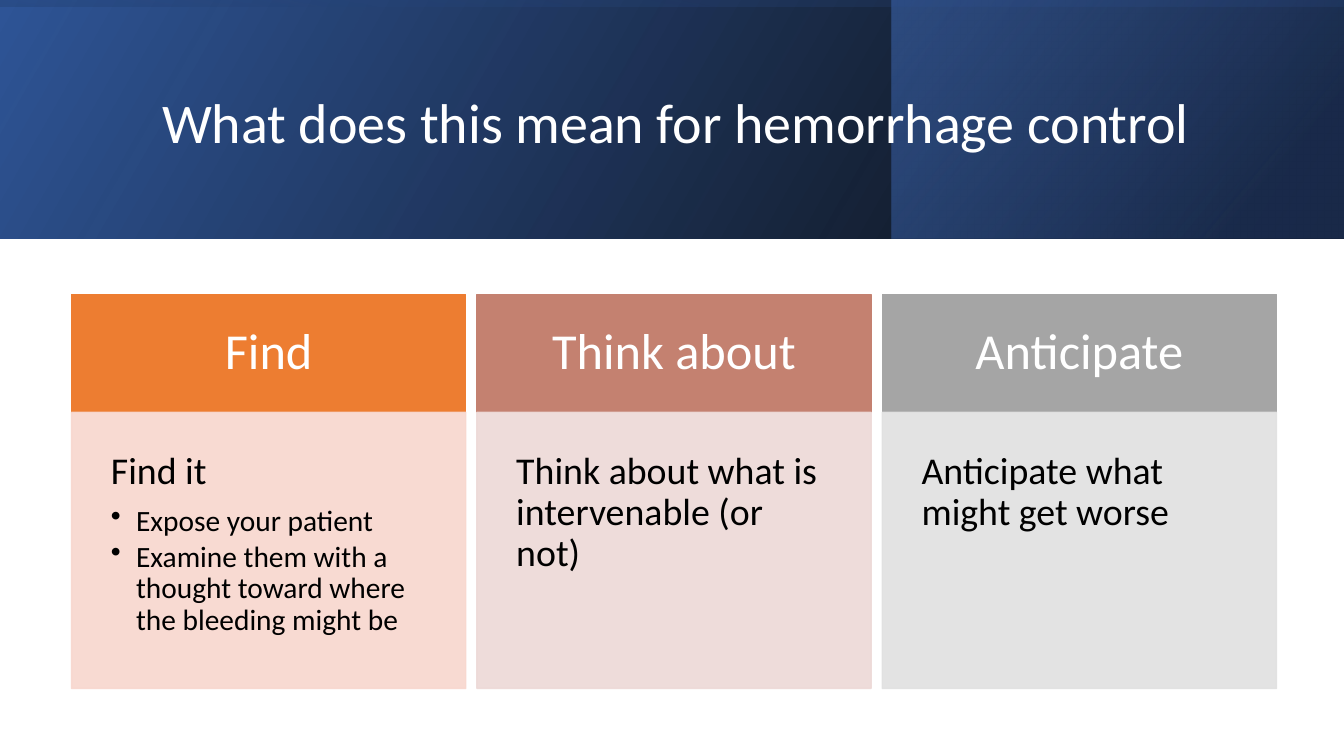
"""Build the hemorrhage control slide."""
from dataclasses import dataclass

from pptx import Presentation, oxml
from pptx.dml import color
from pptx.enum import shapes, text
from pptx.oxml import ns
from pptx import util as u


@dataclass(frozen=True)
class Theme:
    """Colours, font and type sizes of the slide."""
    font: str = "Calibri"
    white: str = "FFFFFF"
    black: str = "000000"
    navy: str = "203864"
    deep_blue: str = "2F5597"
    blue: str = "4472C4"
    title_size: int = 40
    header_size: int = 36
    body_size: int = 27
    bullet_size: int = 21


THEME = Theme()
WIDTH, HEIGHT = 13.33, 7.5
BANNER_HEIGHT = 2.37
COLUMN_LEFT, COLUMN_WIDTH, COLUMN_PITCH = 0.71, 3.91, 4.02
HEADER_TOP, HEADER_HEIGHT, BODY_HEIGHT = 2.92, 1.17, 2.74
COLUMNS = [
    ("Find", "ED7D31", "F8D7CE", "Find it",
     ["Expose your patient",
      "Examine them with a thought toward where the bleeding might be"]),
    ("Think about", "C48170", "EDD9D7",
     "Think about what is intervenable (or not)", []),
    ("Anticipate", "A5A5A5", "E1E1E1", "Anticipate what might get worse", []),
]


def add_rectangle(slide, box):
    """Add a shadowless rectangle at a box given in inches."""
    shape = slide.shapes.add_shape(
        shapes.MSO_SHAPE.RECTANGLE, *map(u.Inches, box))
    shape.shadow.inherit = False
    return shape


def add_gradient(slide, box, stops, angle, rotation=0):
    """Add a mirrored rectangle with a translucent linear gradient."""
    shape = add_rectangle(slide, box)
    shape.rotation = rotation
    shape.line.fill.background()
    shape.fill.background()
    properties = shape._element.spPr
    properties.find(ns.qn("a:xfrm")).set("flipH", "1")
    stop_list = "".join(
        f'<a:gs pos="{position * 1000}"><a:srgbClr val="{rgb}">'
        f'<a:alpha val="{opacity * 1000}"/></a:srgbClr></a:gs>'
        for position, rgb, opacity in stops)
    gradient = oxml.parse_xml(
        f'<a:gradFill {ns.nsdecls("a")} rotWithShape="1">'
        f'<a:gsLst>{stop_list}</a:gsLst>'
        f'<a:lin ang="{angle * 60000}" scaled="0"/></a:gradFill>')
    properties.replace(properties.find(ns.qn("a:noFill")), gradient)


def add_panel(slide, box, rgb, inset, opacity=100):
    """Add a filled panel and return its text frame."""
    shape = add_rectangle(slide, box)
    shape.fill.solid()
    shape.fill.fore_color.rgb = color.RGBColor.from_string(rgb)
    shape.line.color.rgb = color.RGBColor.from_string(rgb)
    shape.line.width = u.Pt(1)
    if opacity < 100:
        for element in list(shape._element.spPr.iter(ns.qn("a:srgbClr"))):
            element.append(oxml.parse_xml(
                f'<a:alpha {ns.nsdecls("a")} val="{opacity * 1000}"/>'))
    frame = shape.text_frame
    frame.word_wrap = True
    frame.margin_left = frame.margin_right = u.Inches(inset)
    frame.margin_top = frame.margin_bottom = u.Inches(inset)
    return frame


def style(paragraph, size, rgb, align=text.PP_ALIGN.LEFT, after=0.0):
    """Format a paragraph, with space after as a share of its type size."""
    paragraph.alignment = align
    paragraph.line_spacing = 0.9
    paragraph.space_after = u.Pt(size * after)
    paragraph.font.name = THEME.font
    paragraph.font.size = u.Pt(size)
    paragraph.font.color.rgb = color.RGBColor.from_string(rgb)


def add_bullet(frame, wording):
    """Append a bulleted paragraph with a hanging indent."""
    paragraph = frame.add_paragraph()
    paragraph.text = wording
    properties = paragraph._p.get_or_add_pPr()
    properties.set("lvl", "1")
    properties.set("marL", str(u.Inches(0.25)))
    properties.set("indent", str(-u.Inches(0.25)))
    properties.append(oxml.parse_xml(
        f'<a:buChar {ns.nsdecls("a")} char="•"/>'))
    style(paragraph, THEME.bullet_size, THEME.black, after=0.15)


def add_banner(slide):
    """Layer the three gradients behind the title."""
    add_gradient(slide, (0, 0, WIDTH, BANNER_HEIGHT),
                 [(0, THEME.black, 96), (100, THEME.deep_blue, 100)], 330)
    add_gradient(slide, (8.84, 0, WIDTH - 8.84, BANNER_HEIGHT),
                 [(19, THEME.navy, 68), (100, THEME.blue, 48)], 320)
    offset = (WIDTH - BANNER_HEIGHT) / 2
    add_gradient(slide, (offset, -offset, BANNER_HEIGHT, WIDTH),
                 [(23, THEME.deep_blue, 16), (99, THEME.black, 45)], 350, 270)


def add_title(slide, wording):
    """Add the title over the banner."""
    box = slide.shapes.add_textbox(*map(u.Inches, (1.51, 0.38, 10.63, 1.72)))
    frame = box.text_frame
    frame.word_wrap = True
    frame.vertical_anchor = text.MSO_ANCHOR.MIDDLE
    frame.text = wording
    style(frame.paragraphs[0], THEME.title_size, THEME.white)


def add_column(slide, index, heading, dark, light, lead, bullets):
    """Add one column: a coloured header above a pale body."""
    left = COLUMN_LEFT + index * COLUMN_PITCH
    header = add_panel(
        slide, (left, HEADER_TOP, COLUMN_WIDTH, HEADER_HEIGHT), dark, 0.31)
    header.vertical_anchor = text.MSO_ANCHOR.MIDDLE
    header.text = heading
    style(header.paragraphs[0], THEME.header_size, THEME.white,
          text.PP_ALIGN.CENTER)
    body = add_panel(
        slide, (left, HEADER_TOP + HEADER_HEIGHT, COLUMN_WIDTH, BODY_HEIGHT),
        light, 0.39, 90)
    body.vertical_anchor = text.MSO_ANCHOR.TOP
    body.text = lead
    style(body.paragraphs[0], THEME.body_size, THEME.black, after=0.35)
    for bullet in bullets:
        add_bullet(body, bullet)


def main():
    """Build and save the slide."""
    presentation = Presentation()
    presentation.slide_width = u.Inches(WIDTH)
    presentation.slide_height = u.Inches(HEIGHT)
    slide = presentation.slides.add_slide(presentation.slide_layouts[6])
    add_banner(slide)
    add_title(slide, "What does this mean for hemorrhage control")
    for index, column in enumerate(COLUMNS):
        add_column(slide, index, *column)
    presentation.save("out.pptx")


if __name__ == "__main__":
    main()
